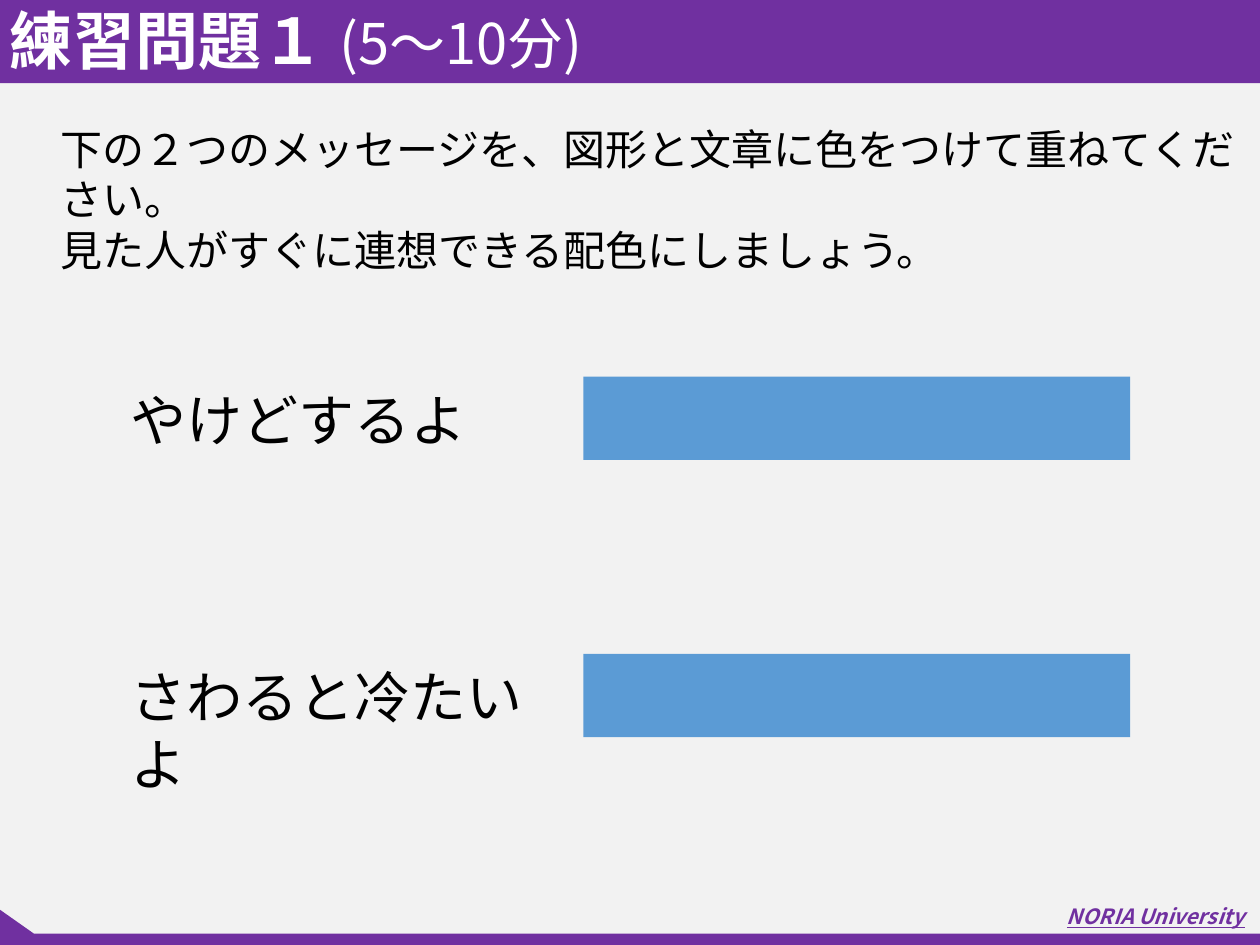
"""Build the colour-association exercise slide."""
from pptx import Presentation, util as u
from pptx.dml.color import RGBColor
from pptx.enum import shapes, text
from pptx.oxml.ns import qn

PURPLE, BLUE, FONT = "7030A0", "5B9BD5", "Noto Sans CJK JP"

prs = Presentation()
prs.slide_width, prs.slide_height = u.Inches(10), u.Inches(7.5)
COL, ROW = prs.slide_width / 10, prs.slide_height / 7.5
s = prs.slides.add_slide(prs.slide_layouts[6])
s.background.fill.solid()
s.background.fill.fore_color.rgb = RGBColor.from_string("F2F2F2")


def paint(sp, color):
    sp.shadow.inherit = False
    sp.fill.solid()
    sp.fill.fore_color.rgb = RGBColor.from_string(color)
    sp.line.fill.background()


def write(paragraphs, x, y, w, h, font=FONT, color="000000", anchor="TOP", spacing=1.0, **style):
    sp = s.shapes.add_textbox(int(x * COL), int(y * ROW), int(w * COL), int(h * ROW))
    tf = sp.text_frame
    tf.word_wrap = True
    tf.vertical_anchor = text.MSO_ANCHOR[anchor]
    for i, runs in enumerate(paragraphs):
        p = tf.paragraphs[0] if i == 0 else tf.add_paragraph()
        p.line_spacing = spacing
        for words, size, bold in runs:
            r = p.add_run()
            r.text = words
            r.font.name, r.font.size, r.font.bold = font, u.Pt(size), bold
            r.font.color.rgb = RGBColor.from_string(color)
            for key, value in style.items():
                setattr(r.font, key, value)
            ea = r.font._element.makeelement(qn("a:ea"), {"typeface": FONT})
            r.font._element.find(qn("a:latin")).addnext(ea)


fb = s.shapes.build_freeform(0, int(7.5 * ROW))
fb.add_line_segments([(int(x * COL), int(y * ROW)) for x, y in
                      [(0, 7.22), (0.27, 7.41), (10, 7.41), (10, 7.5)]])
paint(fb.convert_to_shape(), PURPLE)
write([[("NORIA University", 12, True)]], 8.37, 7.12, 2.2, 0.3,
      color=PURPLE, italic=True, underline=True)

bars = [(0, 0, 10, PURPLE), (4.63, 2.99, 4.34, BLUE), (4.63, 5.19, 4.34, BLUE)]
for x, y, w, color in bars:
    sp = s.shapes.add_shape(shapes.MSO_SHAPE.RECTANGLE, int(x * COL), int(y * ROW),
                            int(w * COL), int(0.66 * ROW))
    paint(sp, color)

write([[("練習問題１ ", 36, True), ("(5～10分)", 32, False)]], -0.02, -0.12, 6.68, 0.94,
      color="FFFFFF", anchor="MIDDLE", spacing=0.9)
write([[("下の２つのメッセージを、図形と文章に色をつけて重ねてください。", 24, False)],
       [("見た人がすぐに連想できる配色にしましょう。", 24, False)]],
      0.38, 0.93, 9.74, 0.91, font="Arial")
for message, y, w in [("やけどするよ", 3.01, 3.26), ("さわると冷たいよ", 5.21, 3.53)]:
    write([[(message, 32, False)]], 0.94, y, w, 0.64, font="Calibri")

prs.save("out.pptx")
